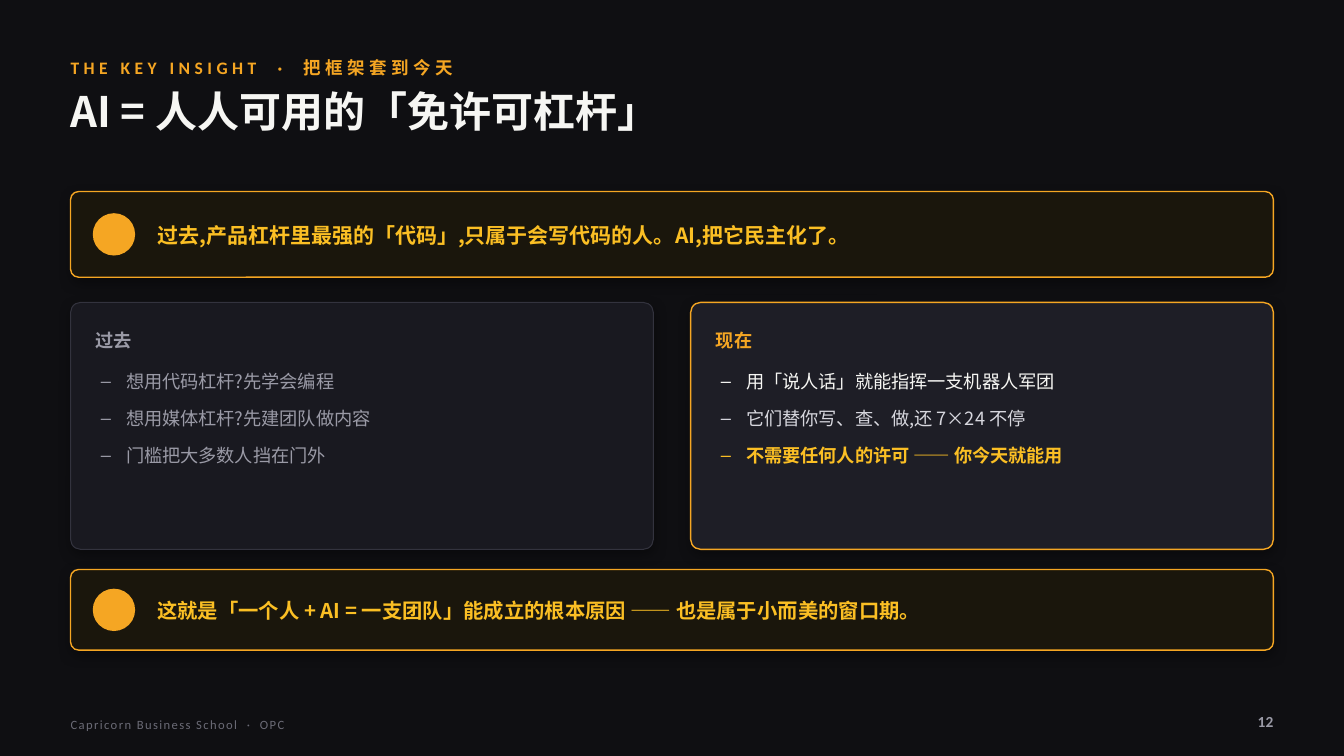
from lxml.etree import SubElement
from pptx import Presentation
from pptx.dml.color import RGBColor
from pptx.enum.shapes import MSO_SHAPE
from pptx.enum.text import MSO_ANCHOR, MSO_AUTO_SIZE, PP_ALIGN
from pptx.oxml.ns import qn
from pptx.util import Inches, Pt

LATIN, CHINESE = "Calibri", "Noto Sans CJK SC"
AMBER, GOLD, WHITE, GREY = "F5A623", "FBBF24", "F6F6F3", "9A9AA6"
LEFT, WIDTH = 0.7, 11.93


def color(hex_string):
    """Turn a hex string into a colour."""
    return RGBColor.from_string(hex_string)


def place(shape, left, top, width, height, anchor=MSO_ANCHOR.MIDDLE):
    """Place a text shape in front, without margins, and return its frame."""
    shape.left, shape.top = Inches(left), Inches(top)
    shape.width, shape.height = Inches(width), Inches(height)
    shape.element.getparent().append(shape.element)
    frame = shape.text_frame
    frame.word_wrap = True
    frame.auto_size = MSO_AUTO_SIZE.NONE
    frame.vertical_anchor = anchor
    frame.margin_left = frame.margin_top = 0
    frame.margin_right = frame.margin_bottom = 0
    return frame


def text_box(slide, *box):
    """Add a text box and return its frame."""
    return place(slide.shapes.add_textbox(0, 0, 0, 0), *box)


def write(paragraph, text, size, hex_string, bold=True, font=CHINESE,
          tracking=0, spacing=1.0, after=0, align=PP_ALIGN.LEFT):
    """Write one run and format its paragraph."""
    paragraph.alignment = align
    paragraph.line_spacing = spacing
    paragraph.space_before, paragraph.space_after = Pt(0), Pt(after)
    run = paragraph.add_run()
    run.text = text
    run.font.size, run.font.bold, run.font.name = Pt(size), bold, font
    run.font.color.rgb = color(hex_string)
    properties = run.font._element
    SubElement(properties, qn("a:ea"), typeface=CHINESE)
    if tracking:
        properties.set("spc", str(int(tracking * 100)))


def add_panel(slide, left, top, width, height, radius, fill, line, weight=1):
    """Add a rounded panel with a soft shadow."""
    panel = slide.shapes.add_shape(
        MSO_SHAPE.ROUNDED_RECTANGLE,
        Inches(left), Inches(top), Inches(width), Inches(height))
    panel.adjustments[0] = radius / height
    panel.fill.solid()
    panel.fill.fore_color.rgb = color(fill)
    panel.line.color.rgb = color(line)
    panel.line.width = Pt(weight)
    panel.shadow.inherit = False
    effects = panel.element.spPr.find(qn("a:effectLst"))
    shadow = SubElement(effects, qn("a:outerShdw"), blurRad=str(Pt(9)),
                        dist=str(Pt(3)), dir="5400000", rotWithShape="0")
    shade = SubElement(shadow, qn("a:srgbClr"), val="000000")
    SubElement(shade, qn("a:alpha"), val="34000")


def add_header(slide):
    """Add the kicker line and the title."""
    kicker = text_box(slide, LEFT, 0.52, WIDTH, 0.3)
    write(kicker.paragraphs[0], "THE KEY INSIGHT  ·  把框架套到今天", 12.5, AMBER,
          font=LATIN, tracking=3.2)
    title = place(slide.shapes.title, LEFT, 0.85, WIDTH, 0.9, MSO_ANCHOR.TOP)
    write(title.paragraphs[0], "AI = 人人可用的「免许可杠杆」", 30, WHITE)


def add_callout(slide, top, height, text, size):
    """Add a full-width callout with a dot."""
    add_panel(slide, LEFT, top, WIDTH, height, 0.08, "1A160C", AMBER)
    diameter = 0.42
    dot = slide.shapes.add_shape(
        MSO_SHAPE.OVAL, Inches(LEFT + 0.22),
        Inches(top + (height - diameter) / 2), Inches(diameter), Inches(diameter))
    dot.fill.solid()
    dot.fill.fore_color.rgb = color(AMBER)
    dot.line.fill.background()
    dot.shadow.inherit = False
    frame = text_box(slide, LEFT + 0.86, top, WIDTH - 1.1, height)
    write(frame.paragraphs[0], text, size, GOLD, spacing=1.05)


def add_card(slide, left, heading_index, heading, heading_color, items,
             fill, line, weight):
    """Add a card with a heading and a dashed list."""
    top = 3
    add_panel(slide, left, top, 5.78, 2.45, 0.1, fill, line, weight)
    placeholders = slide.placeholders
    frame = place(placeholders[heading_index], left + 0.25, top + 0.2, 5, 0.35)
    write(frame.paragraphs[0], heading, 13, heading_color)
    frame = place(placeholders[heading_index + 1], left + 0.3, top + 0.65,
                  5.2, 1.7, MSO_ANCHOR.TOP)
    for index, (text, item_color, bold) in enumerate(items):
        paragraph = frame.add_paragraph() if index else frame.paragraphs[0]
        properties = paragraph._p.get_or_add_pPr()
        properties.set("marL", str(Inches(0.25)))
        properties.set("indent", str(Inches(-0.25)))
        SubElement(properties, qn("a:buChar"), char="–")
        write(paragraph, text, 13, item_color, bold, spacing=1.12, after=9)


def add_footer(slide):
    """Add the footer text and the page number."""
    footer = text_box(slide, LEFT, 7.04, 7, 0.3)
    write(footer.paragraphs[0], "Capricorn Business School  ·  OPC", 9, "6B6B76",
          bold=False, font=LATIN, tracking=1)
    number = text_box(slide, LEFT + WIDTH - 0.8, 7, 0.8, 0.32)
    write(number.paragraphs[0], "12", 11, GREY, font=LATIN, align=PP_ALIGN.RIGHT)


def main():
    """Build and save the slide."""
    presentation = Presentation()
    presentation.slide_width = Inches(13.33)
    presentation.slide_height = Inches(7.5)
    slide = presentation.slides.add_slide(
        presentation.slide_layouts.get_by_name("Comparison"))
    slide.background.fill.solid()
    slide.background.fill.fore_color.rgb = color("0F0F12")
    add_header(slide)
    add_callout(slide, 1.9, 0.85,
                "过去,产品杠杆里最强的「代码」,只属于会写代码的人。AI,把它民主化了。", 15)
    add_card(slide, LEFT, 1, "过去", GREY, [
        ("想用代码杠杆?先学会编程", GREY, False),
        ("想用媒体杠杆?先建团队做内容", GREY, False),
        ("门槛把大多数人挡在门外", GREY, False),
    ], "191920", "33333E", 0.75)
    add_card(slide, 6.85, 3, "现在", AMBER, [
        ("用「说人话」就能指挥一支机器人军团", WHITE, False),
        ("它们替你写、查、做,还 7×24 不停", "D7D7DE", False),
        ("不需要任何人的许可 —— 你今天就能用", GOLD, True),
    ], "1E1E26", AMBER, 1)
    add_callout(slide, 5.65, 0.8,
                "这就是「一个人 + AI = 一支团队」能成立的根本原因 —— 也是属于小而美的窗口期。", 14.5)
    add_footer(slide)
    presentation.save("out.pptx")


if __name__ == "__main__":
    main()
